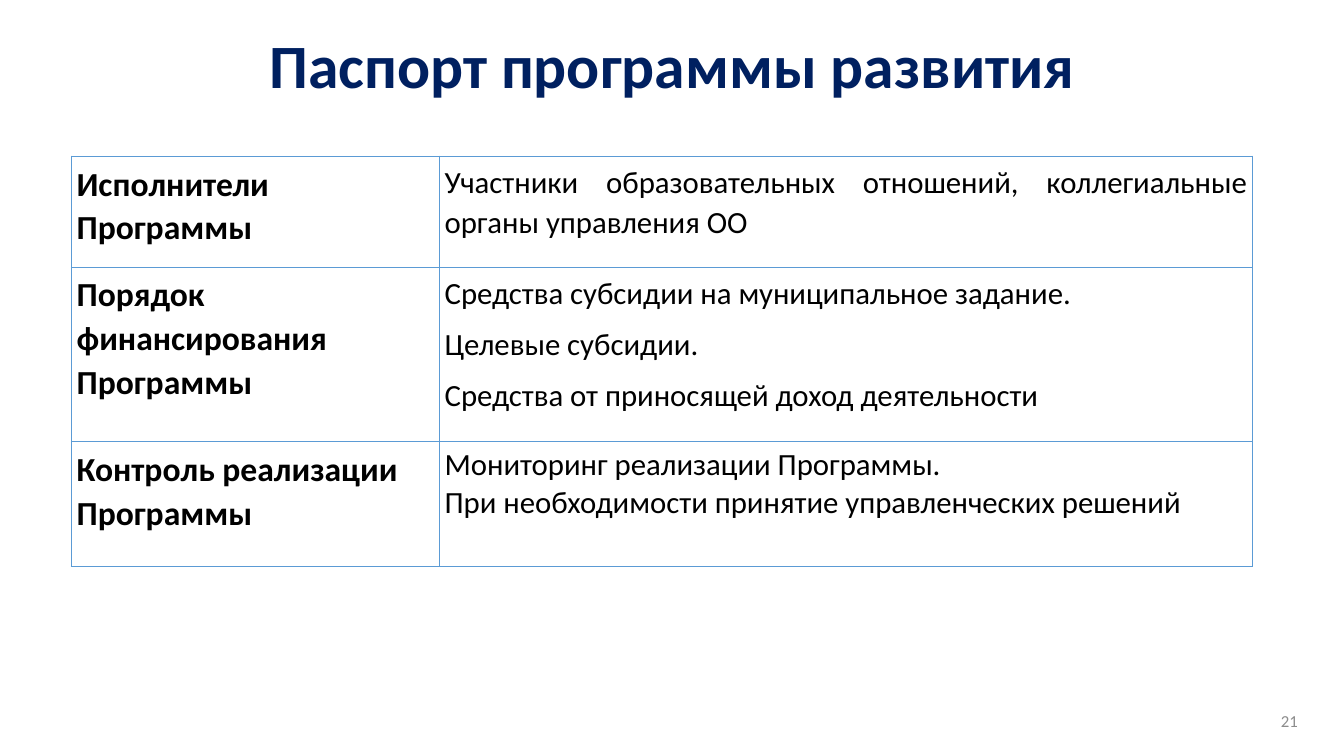
from lxml import etree
from pptx import Presentation
from pptx.dml.color import RGBColor
from pptx.enum import text
from pptx.oxml import ns
from pptx.util import Inches, Pt

NAVY = RGBColor(0x00, 0x20, 0x60)
BLACK = RGBColor(0x00, 0x00, 0x00)
GREY = RGBColor(0x8C, 0x8C, 0x8C)
BORDER_BLUE = RGBColor(0x5B, 0x9B, 0xD5)
FONT = "Calibri"
LEFT, RIGHT = text.PP_ALIGN.LEFT, text.PP_ALIGN.RIGHT
CENTER, JUSTIFY = text.PP_ALIGN.CENTER, text.PP_ALIGN.JUSTIFY

PASSPORT = [
    (1.1, "Исполнители Программы", JUSTIFY, 1.07, 8,
     ["Участники образовательных отношений, коллегиальные органы управления ОО"]),
    (1.73, "Порядок финансирования Программы", LEFT, 1.07, 8,
     ["Средства субсидии на муниципальное задание.",
      "Целевые субсидии.",
      "Средства от приносящей доход деятельности"]),
    (1.24, "Контроль реализации Программы", LEFT, 1, 0,
     ["Мониторинг реализации Программы.",
      "При необходимости принятие управленческих решений"]),
]


def write(frame, lines, size, color, align, bold=False, spacing=1, after=0):
    frame.word_wrap = True
    for index, line in enumerate(lines):
        paragraph = frame.add_paragraph() if index else frame.paragraphs[0]
        paragraph.text = line
        paragraph.alignment = align
        paragraph.line_spacing = spacing
        paragraph.space_before = Pt(0)
        paragraph.space_after = Pt(after)
        paragraph.font.name = FONT
        paragraph.font.size = Pt(size)
        paragraph.font.bold = bold
        paragraph.font.color.rgb = color


def draw_borders(cell):
    properties = cell._tc.get_or_add_tcPr()
    for side in ("a:lnL", "a:lnR", "a:lnT", "a:lnB"):
        line = etree.SubElement(properties, ns.qn(side), w=str(Pt(1)))
        fill = etree.SubElement(line, ns.qn("a:solidFill"))
        etree.SubElement(fill, ns.qn("a:srgbClr"), val=str(BORDER_BLUE))


def add_heading(slide, left, top, width, height):
    heading = slide.shapes.title
    heading.left, heading.top = Inches(left), Inches(top)
    heading.width, heading.height = Inches(width), Inches(height)
    heading.text_frame.vertical_anchor = text.MSO_ANCHOR.MIDDLE
    write(heading.text_frame, ["Паспорт программы развития"], 44, NAVY, CENTER,
          bold=True, spacing=0.9)


def add_passport(slide, left, top, width, label_width):
    height = sum(row[0] for row in PASSPORT)
    passport = slide.shapes.add_table(
        len(PASSPORT), 2, Inches(left), Inches(top), Inches(width), Inches(height)).table
    passport.first_row = passport.horz_banding = False
    passport.columns[0].width = Inches(label_width)
    passport.columns[1].width = Inches(width - label_width)
    for index, (row_height, label, align, spacing, after, details) in enumerate(PASSPORT):
        passport.rows[index].height = Inches(row_height)
        label_cell, details_cell = passport.rows[index].cells
        for cell in (label_cell, details_cell):
            cell.margin_left = cell.margin_right = Inches(0.05)
            cell.margin_top = cell.margin_bottom = Inches(0.05)
            draw_borders(cell)
            cell.fill.background()
        write(label_cell.text_frame, [label], 24, BLACK, align,
              bold=True, spacing=1.07, after=8)
        write(details_cell.text_frame, details, 22, BLACK, JUSTIFY,
              spacing=spacing, after=after)


def add_page_number(slide, left, top, width, height):
    page_number = slide.shapes.add_textbox(
        Inches(left), Inches(top), Inches(width), Inches(height))
    page_number.text_frame.vertical_anchor = text.MSO_ANCHOR.MIDDLE
    write(page_number.text_frame, ["21"], 12, GREY, RIGHT)


def main():
    deck = Presentation()
    deck.slide_width, deck.slide_height = Inches(13.33), Inches(7.5)
    slide = deck.slides.add_slide(deck.slide_layouts[5])
    add_heading(slide, 0.92, 0.21, 11.5, 0.94)
    add_passport(slide, 0.71, 1.55, 11.71, 3.65)
    add_page_number(slide, 11, 6.95, 1.97, 0.4)
    deck.save("out.pptx")


if __name__ == "__main__":
    main()
